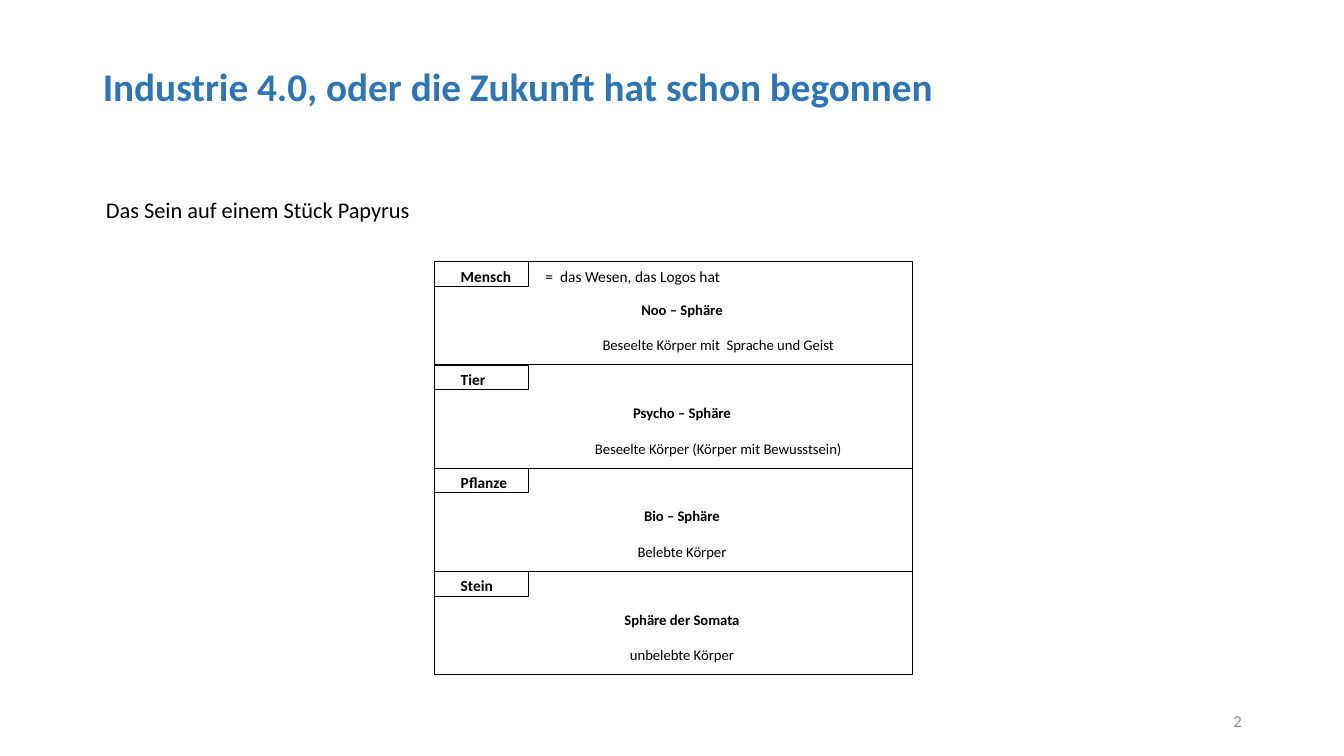
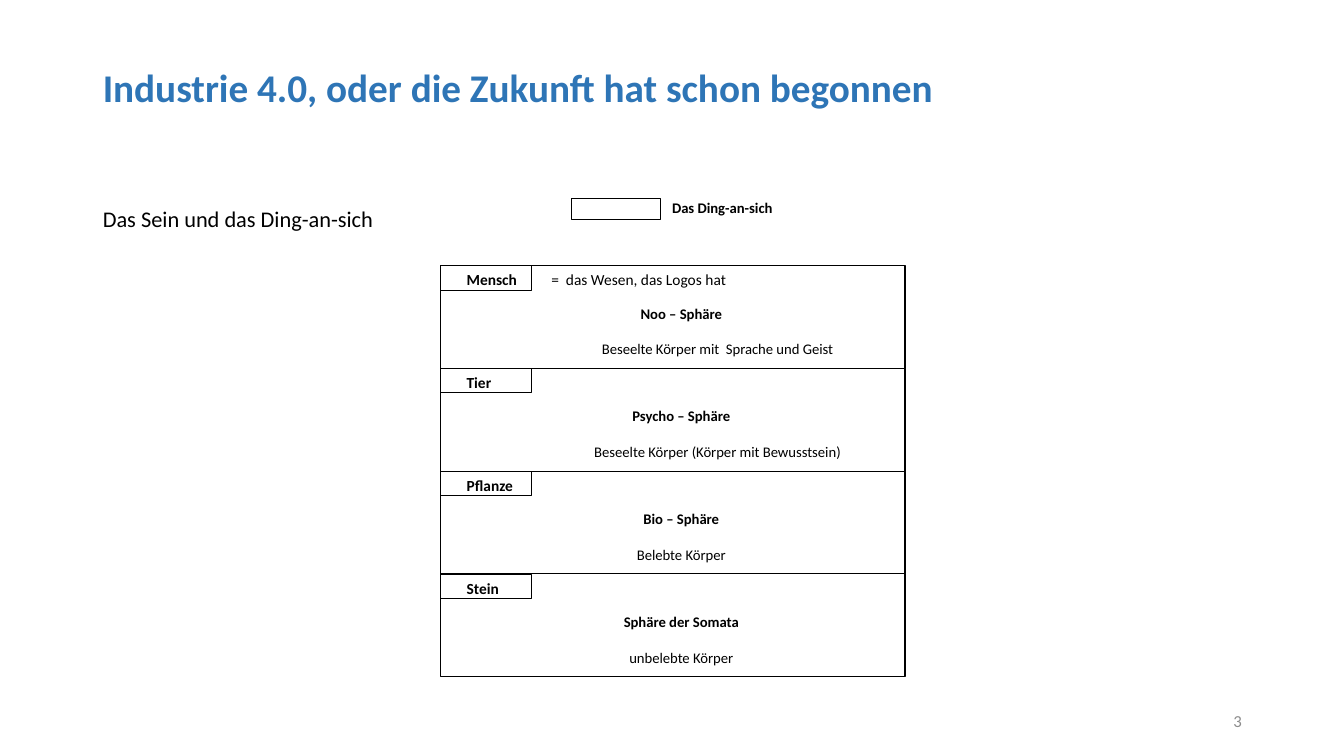
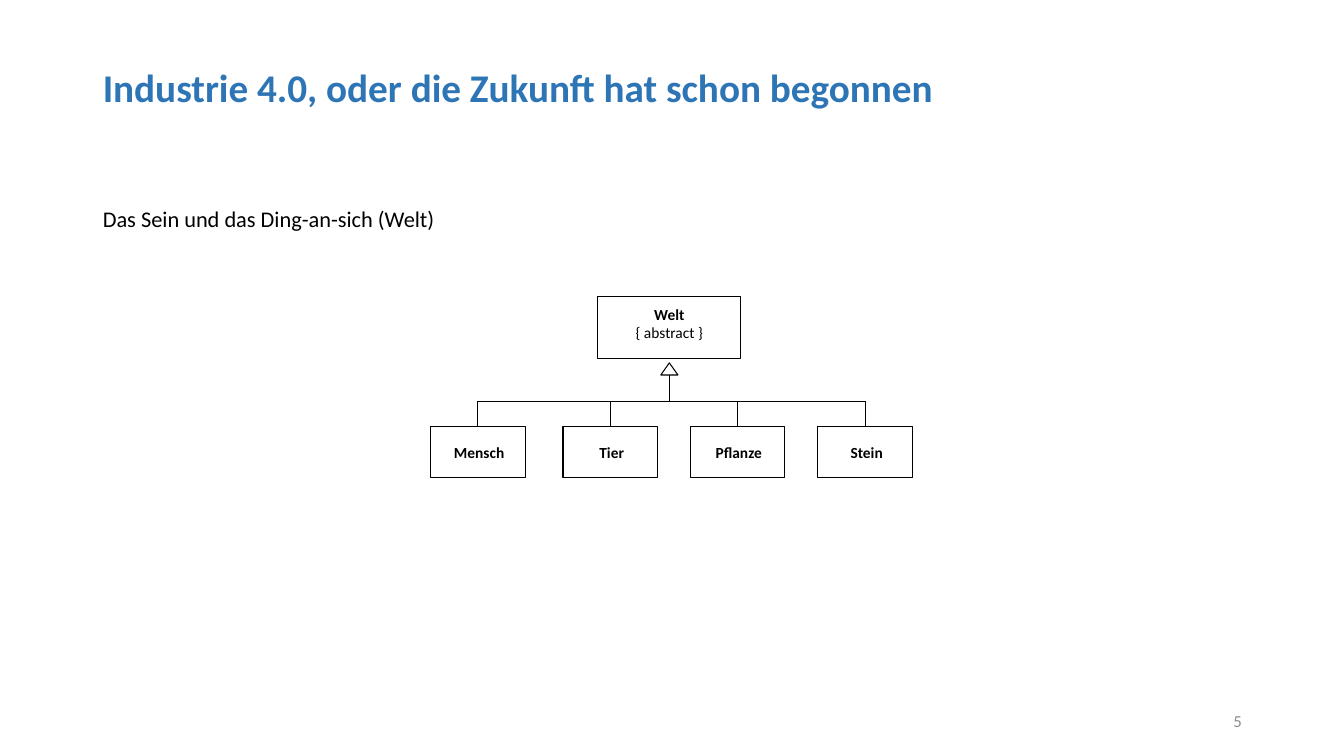
from dataclasses import dataclass

from pptx import Presentation
from pptx.dml.color import RGBColor
from pptx.enum.shapes import MSO_CONNECTOR, MSO_SHAPE
from pptx.enum.text import MSO_ANCHOR, PP_ALIGN
from pptx.oxml.ns import qn
from pptx.util import Emu, Inches, Pt

LEFT, CENTER, RIGHT = PP_ALIGN.LEFT, PP_ALIGN.CENTER, PP_ALIGN.RIGHT
TOP, MIDDLE = MSO_ANCHOR.TOP, MSO_ANCHOR.MIDDLE
RECTANGLE, TRIANGLE = MSO_SHAPE.RECTANGLE, MSO_SHAPE.ISOSCELES_TRIANGLE
STRAIGHT = MSO_CONNECTOR.STRAIGHT
TOP_SIDE = 0
TITLE_AND_CONTENT = 1


@dataclass(frozen=True)
class Theme:
    font: str = "Calibri"
    accent: RGBColor = RGBColor(0x2E, 0x75, 0xB6)
    ink: RGBColor = RGBColor(0, 0, 0)
    muted: RGBColor = RGBColor(0x8C, 0x8C, 0x8C)
    paper: RGBColor = RGBColor(0xFF, 0xFF, 0xFF)
    title: float = 28
    body: float = 16
    footer: float = 12
    label: float = 11
    caption: float = 10.5
    rule: float = 0.75
    hairline: float = 0.5


THEME = Theme()
TITLE = "Industrie 4.0, oder die Zukunft hat schon begonnen"

# Name, note beside the name, sphere, description, description indent
LAYERS = (
    ("Mensch", "=  das Wesen, das Logos hat", "Noo – Sphäre",
     "Beseelte Körper mit  Sprache und Geist", 5.4),
    ("Tier", "", "Psycho – Sphäre",
     "Beseelte Körper (Körper mit Bewusstsein)", 5.4),
    ("Pflanze", "", "Bio – Sphäre", "Belebte Körper", 0),
    ("Stein", "", "Sphäre der Somata", "unbelebte Körper", 0),
)


def apply(target, values):
    for name, value in values.items():
        setattr(target, name, value)


class Deck:
    """Style and current page; lengths are percent of the slide's size."""

    def __init__(self):
        self.presentation = Presentation()
        apply(self.presentation, {"slide_width": Inches(13.33),
                                  "slide_height": Inches(7.5)})
        self.page = None

    def across(self, share):
        return Emu(round(self.presentation.slide_width * share / 100))

    def down(self, share):
        return Emu(round(self.presentation.slide_height * share / 100))

    def frame(self, x, y, width, height):
        return (self.across(x), self.down(y),
                self.across(width), self.down(height))

    # Text
    def format_para(self, para, text, size, color=THEME.ink, bold=False,
                    indent=0, **layout):
        apply(para, layout)
        para._p.get_or_add_pPr().set("marL", str(self.across(indent)))
        span = para.add_run()
        span.text = text
        apply(span.font, {"name": THEME.font, "size": Pt(size), "bold": bold})
        span.font.color.rgb = color

    def fill_text(self, box, lines, anchor=MIDDLE, left=0, top=0):
        frame = box.text_frame
        apply(frame, {"word_wrap": True, "vertical_anchor": anchor,
                      "margin_left": self.across(left),
                      "margin_top": self.down(top),
                      "margin_right": 0, "margin_bottom": 0})
        for index, line in enumerate(lines):
            para = frame.add_paragraph() if index else frame.paragraphs[0]
            self.format_para(para, **line)

    def text(self, place, line, **layout):
        box = self.page.shapes.add_textbox(*self.frame(*place))
        self.fill_text(box, [line], **layout)

    # Page with title, body line and number
    def start_page(self, number, subject, title_height=13.2,
                   body_place=(6.9, 26.93, 61.73, 63.47)):
        layout = self.presentation.slide_layouts[TITLE_AND_CONTENT]
        self.page = self.presentation.slides.add_slide(layout)
        title, body = self.page.placeholders
        parts = (
            (title, (6.9, 5.33, 86.25, title_height), MIDDLE,
             {"text": TITLE, "size": THEME.title, "color": THEME.accent,
              "bold": True}),
            (body, body_place, TOP,
             {"text": subject, "size": THEME.body, "space_before": Pt(10)}),
        )
        for holder, place, anchor, line in parts:
            names = ("left", "top", "width", "height")
            apply(holder, dict(zip(names, self.frame(*place))))
            apply(holder.text_frame, {"vertical_anchor": anchor,
                                      "word_wrap": True})
            para = holder.text_frame.paragraphs[0]
            self.format_para(para, alignment=LEFT, line_spacing=0.9, **line)
            settings = para._p.get_or_add_pPr()
            settings.set("indent", "0")
            settings.append(settings.makeelement(qn("a:buNone"), {}))
        self.text((70.65, 92.67, 21.75, 5.33),
                  {"text": str(number), "size": THEME.footer,
                   "color": THEME.muted, "alignment": RIGHT})

    # Outlined shapes and lines
    def outline(self, place, lines=(), kind=RECTANGLE, weight=THEME.rule,
                fill=None, **layout):
        box = self.page.shapes.add_shape(kind, *self.frame(*place))
        box.shadow.inherit = False
        if fill is None:
            box.fill.background()
        else:
            box.fill.solid()
            box.fill.fore_color.rgb = fill
        box.line.color.rgb = THEME.ink
        box.line.width = Pt(weight)
        self.fill_text(box, lines, **layout)
        return box

    def line(self, x1, y1, x2, y2, start=None):
        rule = self.page.shapes.add_connector(
            STRAIGHT, self.across(x1), self.down(y1),
            self.across(x2), self.down(y2))
        if start is not None:
            rule.begin_connect(start, TOP_SIDE)
        rule.line.color.rgb = THEME.ink
        rule.line.width = Pt(THEME.rule)
        settings = rule._element.spPr
        settings.append(settings.makeelement(qn("a:effectLst"), {}))

    # Stack of the four layers of being
    def layers(self, x, y, width, pitch, label_width):
        label_height = 3.25
        for row, (name, note, sphere, detail, indent) in enumerate(LAYERS):
            top = y + row * pitch
            self.outline((x, top, width, pitch), [
                {"text": sphere, "size": THEME.caption, "bold": True,
                 "alignment": CENTER},
                {"text": detail, "size": THEME.caption, "indent": indent,
                 "alignment": CENTER, "space_before": Pt(12.8)},
            ], left=1.28, top=3.73)
            self.outline((x, top, label_width, label_height),
                         [{"text": name, "size": THEME.label, "bold": True,
                           "alignment": LEFT}],
                         weight=THEME.hairline, anchor=TOP, left=1.95, top=0.67)
            if note:
                self.text((x + 8.25, top, 24, label_height),
                          {"text": note, "size": THEME.label},
                          anchor=TOP, top=0.67)

    # Class tree: the world above its four kinds
    def class_tree(self):
        root_x, root_width = 44.48, 10.65
        leaf_y, leaf_width, bus_y = 56.4, 7.05, 53.07
        self.outline((root_x, 39.2, root_width, 8.27), [
            {"text": "Welt", "size": THEME.label, "bold": True,
             "alignment": CENTER},
            {"text": "{ abstract }", "size": THEME.label,
             "alignment": CENTER},
        ], anchor=TOP, top=1.1)
        lefts = (32.03, 41.89, 51.34, 60.86)
        centers = [left + leaf_width / 2 for left in lefts]
        for left, center, layer in zip(lefts, centers, LAYERS):
            leaf = self.outline((left, leaf_y, leaf_width, 6.8),
                                [{"text": layer[0], "size": THEME.label,
                                  "bold": True, "alignment": CENTER}],
                                left=0.2)
            self.line(center, leaf_y, center, bus_y, start=leaf)
        self.line(centers[0], bus_y, centers[-1], bus_y)
        stem, head_width = root_x + root_width / 2, 1.28
        self.line(stem, 48.93, stem, bus_y)
        self.outline((stem - head_width / 2, 48, head_width, 1.6),
                     kind=TRIANGLE, fill=THEME.paper)


def main():
    deck = Deck()

    # Being on a piece of papyrus
    deck.start_page(2, "Das Sein auf einem Stück Papyrus", title_height=12.93,
                    body_place=(7.13, 25.73, 60.75, 63.47))
    deck.layers(x=32.33, y=34.6, width=35.55, pitch=13.66, label_width=6.98)

    # Being and the thing-in-itself
    deck.start_page(3, "Das Sein und das Ding-an-sich")
    deck.layers(x=32.77, y=35.12, width=34.57, pitch=13.6, label_width=6.77)
    deck.outline((42.5, 26.27, 6.68, 2.8))
    deck.text((41.33, 25.87, 24.83, 3.33),
              {"text": "Das Ding-an-sich", "size": THEME.caption,
               "bold": True, "alignment": CENTER})

    # The world as a class tree
    deck.start_page(5, "Das Sein und das Ding-an-sich (Welt)")
    deck.class_tree()

    deck.presentation.save("out.pptx")


if __name__ == "__main__":
    main()
